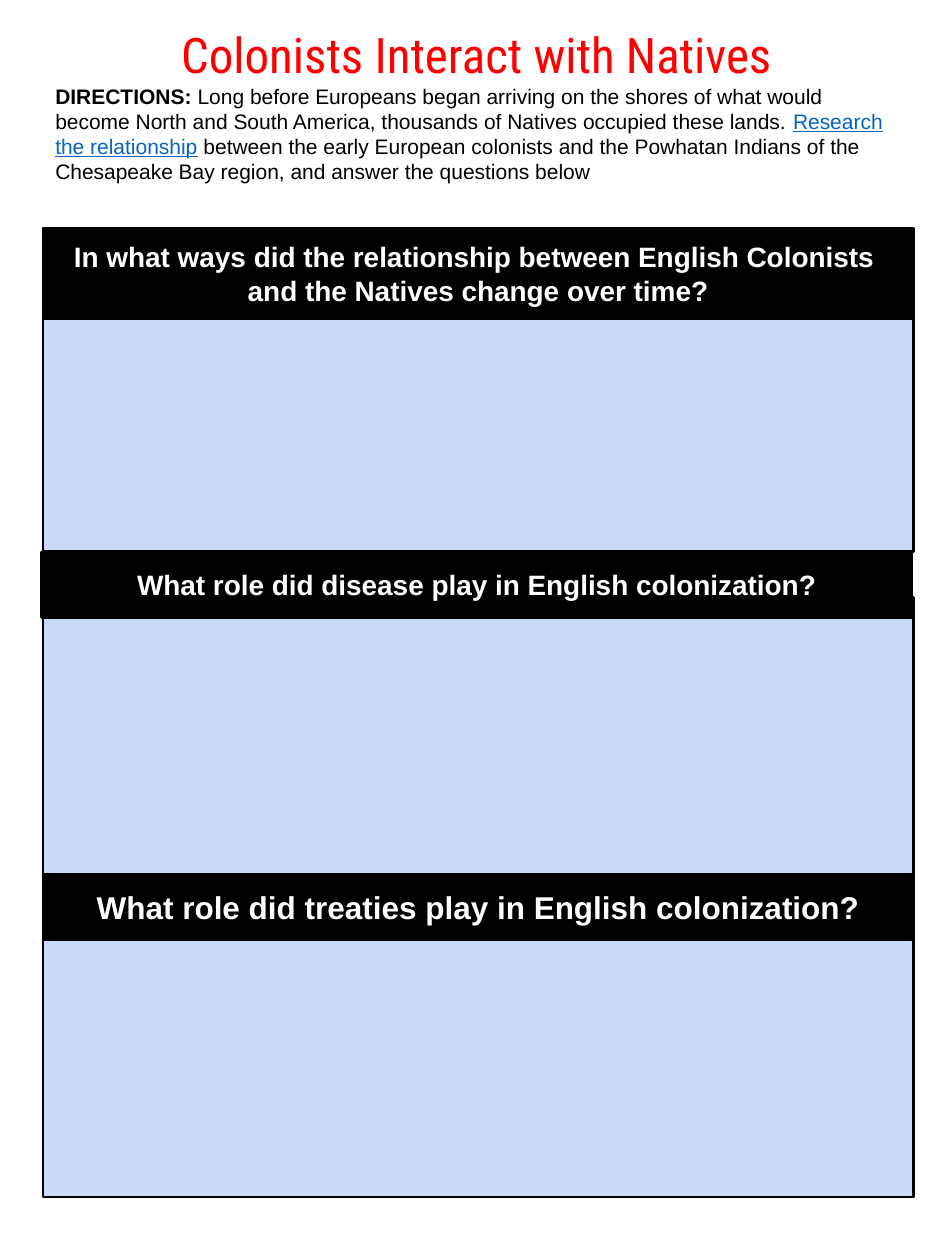
import pptx
import pptx.dml.color
import pptx.enum.shapes
import pptx.enum.text
import pptx.util
from pptx.util import Inches

ALIGN = pptx.enum.text.PP_ALIGN
ANCHOR = pptx.enum.text.MSO_ANCHOR
LEFT, WIDTH = 0.34, 6.91
ANSWER_HEIGHT = 2.2
BLACK, WHITE, RED, BLUE, LINK = "000000", "FFFFFF", "FF0000", "C9DAF8", "0563C1"


def color(hex_text):
    return pptx.dml.color.RGBColor.from_string(hex_text)


def set_font(font, name, size, hex_text, bold=False):
    font.name = name
    font.size = pptx.util.Pt(size)
    font.bold = bold
    font.color.rgb = color(hex_text)


def set_frame(tf, anchor, inset):
    tf.word_wrap = True
    tf.vertical_anchor = anchor
    tf.margin_left = tf.margin_right = Inches(0.1)
    tf.margin_top = tf.margin_bottom = Inches(inset)


def add_title(s, text):
    tf = s.shapes.add_textbox(Inches(0.43), Inches(0.14), Inches(6.7), Inches(0.57)).text_frame
    set_frame(tf, ANCHOR.MIDDLE, 0.05)
    p = tf.paragraphs[0]
    p.text = text
    p.alignment = ALIGN.CENTER
    set_font(p.font, "Roboto Condensed", 28, RED)


def add_directions(s, parts):
    tf = s.shapes.add_textbox(Inches(LEFT), Inches(0.56), Inches(6.81), Inches(1.1)).text_frame
    set_frame(tf, ANCHOR.TOP, 0.1)
    p = tf.paragraphs[0]
    set_font(p.font, "Arial", 12, BLACK)
    for text, bold, linked in parts:
        r = p.add_run()
        r.text = text
        set_font(r.font, "Arial", 12, LINK if linked else BLACK, bold)
        r.font.underline = linked


def add_box(s, left, top, height, fill):
    sp = s.shapes.add_shape(
        pptx.enum.shapes.MSO_SHAPE.RECTANGLE,
        Inches(left), Inches(top), Inches(WIDTH), Inches(height))
    sp.shadow.inherit = False
    sp.fill.solid()
    sp.fill.fore_color.rgb = color(fill)
    sp.line.color.rgb = color(BLACK)
    sp.line.width = pptx.util.Pt(1.5)
    return sp


def add_question(s, text, left, top, height, size):
    # The answer area sits partly behind its heading
    add_box(s, LEFT, top + 0.36 if top != 1.81 else top + 0.37, ANSWER_HEIGHT, BLUE)
    tf = add_box(s, left, top, height, BLACK).text_frame
    set_frame(tf, ANCHOR.MIDDLE, 0.1)
    p = tf.paragraphs[0]
    p.text = text
    p.alignment = ALIGN.CENTER
    set_font(p.font, "Arial", size, WHITE, True)


def main():
    prs = pptx.Presentation()
    prs.slide_width, prs.slide_height = Inches(7.5), Inches(10)
    s = prs.slides.add_slide(prs.slide_layouts[6])

    # Title and directions
    add_title(s, "Colonists Interact with Natives")
    add_directions(s, [
        ("DIRECTIONS: ", True, False),
        ("Long before Europeans began arriving on the shores of what would become "
         "North and South America, thousands of Natives occupied these lands. ", False, False),
        ("Research the relationship", False, True),
        (" between the early European colonists and the Powhatan Indians of the "
         "Chesapeake Bay region, and answer the questions below", False, False),
    ])

    # Questions with answer areas: text, left, top, heading height, text size
    for question in [
        ("In what ways did the relationship between English Colonists \v"
         "and the Natives change over time?", LEFT, 1.81, 0.72, 16),
        ("What role did disease play in English colonization?", 0.33, 4.38, 0.52, 16),
        ("What role did treaties play in English colonization?", LEFT, 6.94, 0.52, 18),
    ]:
        add_question(s, *question)

    prs.save("out.pptx")


if __name__ == "__main__":
    main()
